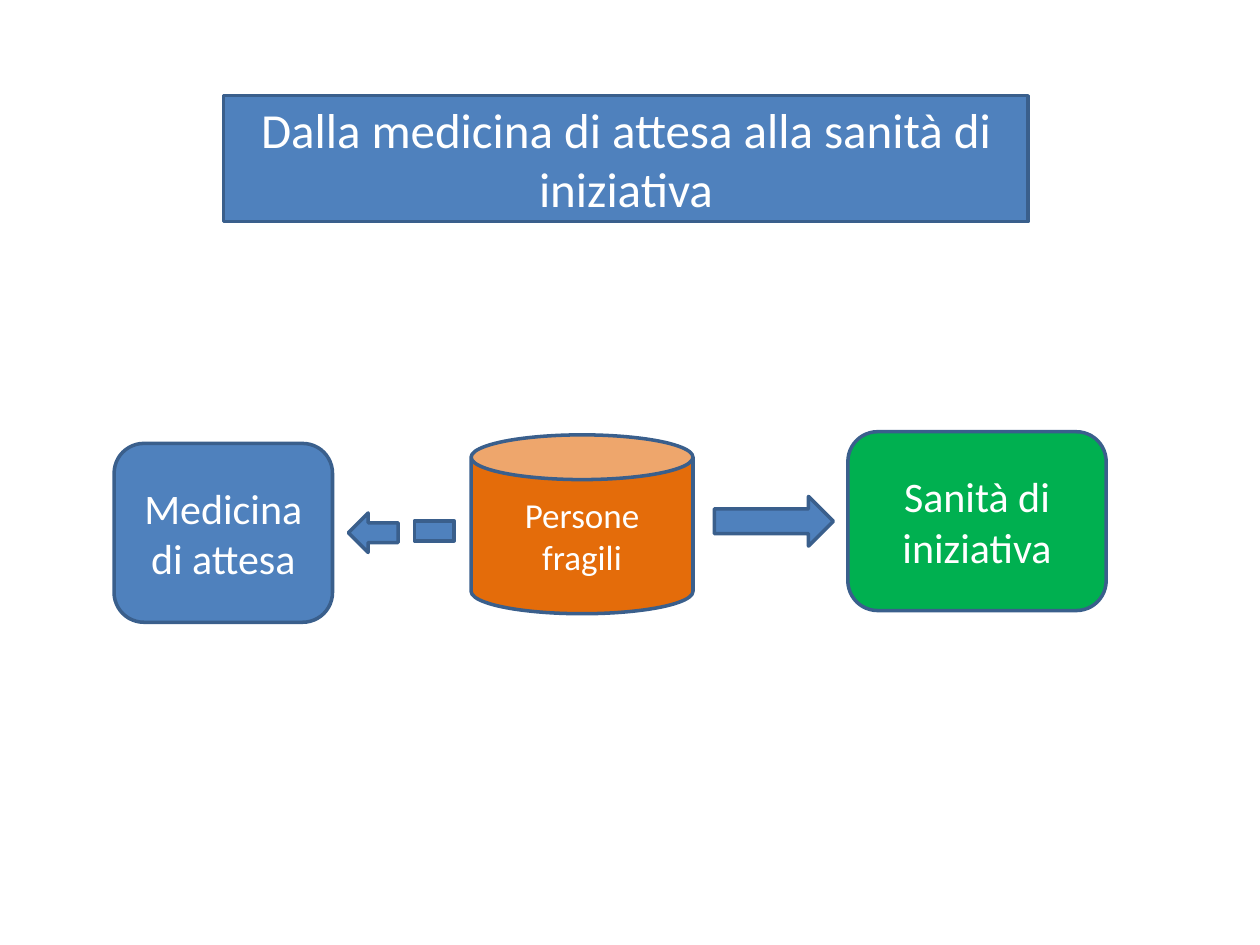
from dataclasses import dataclass

from pptx import Presentation
from pptx.dml.color import RGBColor
from pptx.enum import shapes, text
from pptx.util import Pt


@dataclass(frozen=True)
class Theme:
    blue: str = "4F81BD"
    outline: str = "3A5F8C"
    orange: str = "E46C0A"
    green: str = "00B050"
    white: str = "FFFFFF"
    font: str = "Calibri"
    title_size: int = 28
    box_size: int = 24
    can_size: int = 20
    line_width: int = 2


theme = Theme()
kinds = shapes.MSO_SHAPE

prs = Presentation()
prs.slide_width, prs.slide_height = Pt(720), Pt(540)
slide = prs.slides.add_slide(prs.slide_layouts[6])


def add_block(kind, left, top, width, height, fill=theme.blue):
    block = slide.shapes.add_shape(kind, Pt(left), Pt(top), Pt(width), Pt(height))
    block.shadow.inherit = False
    block.fill.solid()
    block.fill.fore_color.rgb = RGBColor.from_string(fill)
    block.line.color.rgb = RGBColor.from_string(theme.outline)
    block.line.width = Pt(theme.line_width)
    return block


def write(block, wording, size=theme.box_size, color=theme.white):
    frame = block.text_frame
    frame.word_wrap = True
    frame.vertical_anchor = text.MSO_ANCHOR.MIDDLE
    paragraph = frame.paragraphs[0]
    paragraph.alignment = text.PP_ALIGN.CENTER
    run = paragraph.add_run()
    run.text = wording
    run.font.name = theme.font
    run.font.size = Pt(size)
    run.font.color.rgb = RGBColor.from_string(color)


# The three stages share one height
stage_height = 102.2

fragile_people = add_block(kinds.CAN, 269.2, 248.5, 126.8, stage_height, fill=theme.orange)
write(fragile_people, "Persone fragili", size=theme.can_size)

initiative_care = add_block(kinds.FLOWCHART_ALTERNATE_PROCESS, 484.5, 246.7, 147.6,
                            stage_height, fill=theme.green)
write(initiative_care, "Sanità di iniziativa")

waiting_care = add_block(kinds.ROUNDED_RECTANGLE, 65.2, 253.4, 124.8, stage_height)
write(waiting_care, "Medicina di attesa")

# Broken arrow back to waiting care, whole arrow on to initiative care
add_block(kinds.LEFT_ARROW, 199.1, 293.1, 28.4, 22.6)
add_block(kinds.RECTANGLE, 236.9, 297.6, 22.6, 11.5)
add_block(kinds.RIGHT_ARROW, 408.2, 283.7, 68, 28.4)

# Title
title = add_block(kinds.RECTANGLE, 127.8, 54.7, 459.7, 72)
write(title, "Dalla medicina di attesa alla sanità di iniziativa", size=theme.title_size)

prs.save("out.pptx")
